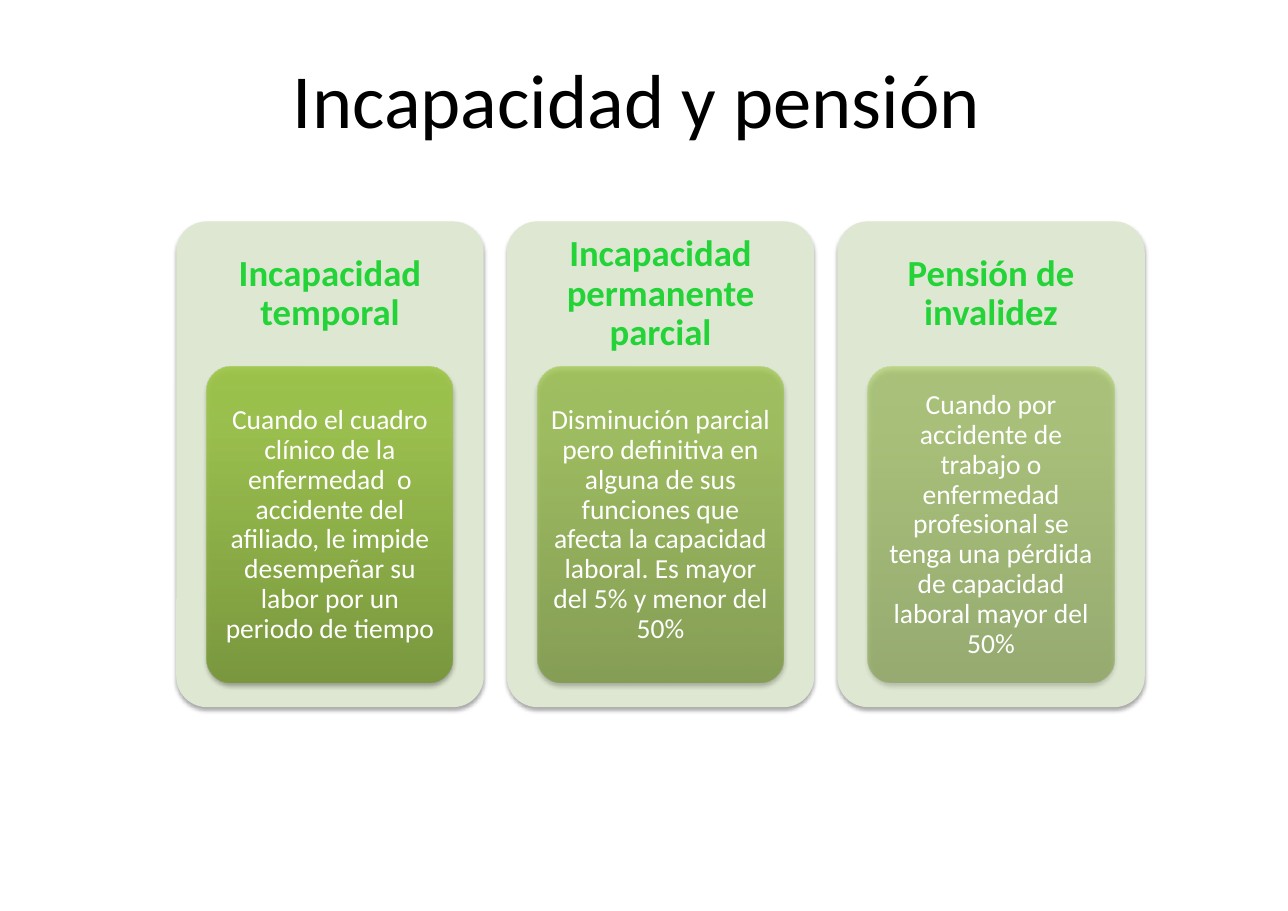
from dataclasses import dataclass

from lxml.etree import SubElement
from pptx import Presentation
from pptx.dml.color import RGBColor
from pptx.enum.shapes import MSO_SHAPE
from pptx.enum.text import MSO_ANCHOR, PP_ALIGN
from pptx.oxml.ns import qn
from pptx.util import Inches, Pt

CARDS = [
    ("Incapacidad temporal",
     "Cuando el cuadro clínico de la enfermedad  o accidente del afiliado, "
     "le impide desempeñar su labor por un periodo de tiempo", 90),
    ("Incapacidad permanente parcial",
     "Disminución parcial pero definitiva en alguna de sus funciones que "
     "afecta la capacidad laboral. Es mayor del 5% y menor del 50%", 70),
    ("Pensión de invalidez",
     "Cuando por accidente de trabajo o enfermedad profesional se tenga "
     "una pérdida de capacidad laboral mayor del 50%", 50),
]


@dataclass(frozen=True)
class Theme:
    font: str = "Calibri"
    title: str = "000000"
    heading: str = "23D338"
    body: str = "FFFFFF"
    card: str = "DEE7D1"
    shadow: str = "000000"
    panel: tuple = ((0, "779737"), (80, "9BC348"), (100, "9DC746"))
    title_size: int = 50
    heading_size: int = 24
    body_size: int = 18


@dataclass(frozen=True)
class Grid:
    """Equal columns, one row high; lengths in inches."""
    left: float = 1.6
    top: float = 2.01
    width: float = 2.79
    height: float = 4.41
    gap: float = 0.21

    def area(self, col, x, y, w, h, pad=0):
        """Box inside a column, given as shares of the column, shrunk by pad."""
        left = self.left + col * (self.width + self.gap)
        return (left + x * self.width + pad, self.top + y * self.height + pad,
                w * self.width - 2 * pad, h * self.height - 2 * pad)


def add_color(parent, value, alpha):
    """Add a colour with an opacity in percent."""
    color = SubElement(parent, qn("a:srgbClr"), val=value)
    SubElement(color, qn("a:alpha"), val=str(alpha * 1000))


class SlideBuilder:
    def __init__(self, prs, theme):
        self.prs = prs
        self.theme = theme
        self.slide = prs.slides.add_slide(prs.slide_layouts[6])

    def share(self, x, y, w, h):
        """Box in inches from percentages of the slide's size."""
        width, height = self.prs.slide_width.inches, self.prs.slide_height.inches
        return (x * width / 100, y * height / 100,
                w * width / 100, h * height / 100)

    def text(self, area, text, size, color, bold=False, spacing=1.0,
             inset=(0.1, 0.05)):
        tf = self.slide.shapes.add_textbox(*map(Inches, area)).text_frame
        side, edge = map(Inches, inset)
        frame_format = {
            "word_wrap": True, "vertical_anchor": MSO_ANCHOR.MIDDLE,
            "margin_left": side, "margin_right": side,
            "margin_top": edge, "margin_bottom": edge,
        }
        for name, value in frame_format.items():
            setattr(tf, name, value)
        p = tf.paragraphs[0]
        p.alignment = PP_ALIGN.CENTER
        p.line_spacing = spacing
        r = p.add_run()
        r.text = text
        font_format = {"name": self.theme.font, "size": Pt(size), "bold": bold}
        for name, value in font_format.items():
            setattr(r.font, name, value)
        r.font.color.rgb = RGBColor.from_string(color)

    def rounded(self, area):
        """Rounded rectangle without an outline, with a soft shadow below."""
        s = self.slide.shapes.add_shape(MSO_SHAPE.ROUNDED_RECTANGLE,
                                        *map(Inches, area))
        s.adjustments[0] = 0.1
        s.line.fill.background()
        s.shadow.inherit = False
        effects = s._element.spPr.find(qn("a:effectLst"))
        shadow = SubElement(effects, qn("a:outerShdw"), blurRad=str(Pt(3.1)),
                            dist=str(Pt(1.8)), dir="5400000", rotWithShape="0")
        add_color(shadow, self.theme.shadow, 35)
        return s

    def card(self, area):
        s = self.rounded(area)
        s.fill.solid()
        s.fill.fore_color.rgb = RGBColor.from_string(self.theme.card)

    def panel(self, area, alpha):
        s = self.rounded(area)
        s.fill.gradient()
        s.fill.gradient_angle = 90
        stops = s._element.spPr.find(qn("a:gradFill")).find(qn("a:gsLst"))
        for stop in list(stops):
            stops.remove(stop)
        for position, color in self.theme.panel:
            stop = SubElement(stops, qn("a:gs"), pos=str(position * 1000))
            add_color(stop, color, alpha)


def main():
    prs = Presentation()
    prs.slide_width, prs.slide_height = Inches(11.69), Inches(8.27)
    theme, grid = Theme(), Grid()
    slide = SlideBuilder(prs, theme)
    slide.text(slide.share(10.95, 5.08, 77, 11.37), "Incapacidad y pensión",
               theme.title_size, theme.title)

    panel_box = (0.1, 0.3, 0.8, 0.65)
    for col, (heading, body, alpha) in enumerate(CARDS):
        slide.card(grid.area(col, 0, 0, 1, 1))
        slide.text(grid.area(col, 0, 0, 1, 0.3), heading, theme.heading_size,
                   theme.heading, bold=True, spacing=0.9, inset=(0.1, 0.1))
        slide.panel(grid.area(col, *panel_box), alpha)
        slide.text(grid.area(col, *panel_box, pad=0.07), body, theme.body_size,
                   theme.body, spacing=0.9, inset=(0.05, 0.04))
    prs.save("out.pptx")


if __name__ == "__main__":
    main()
